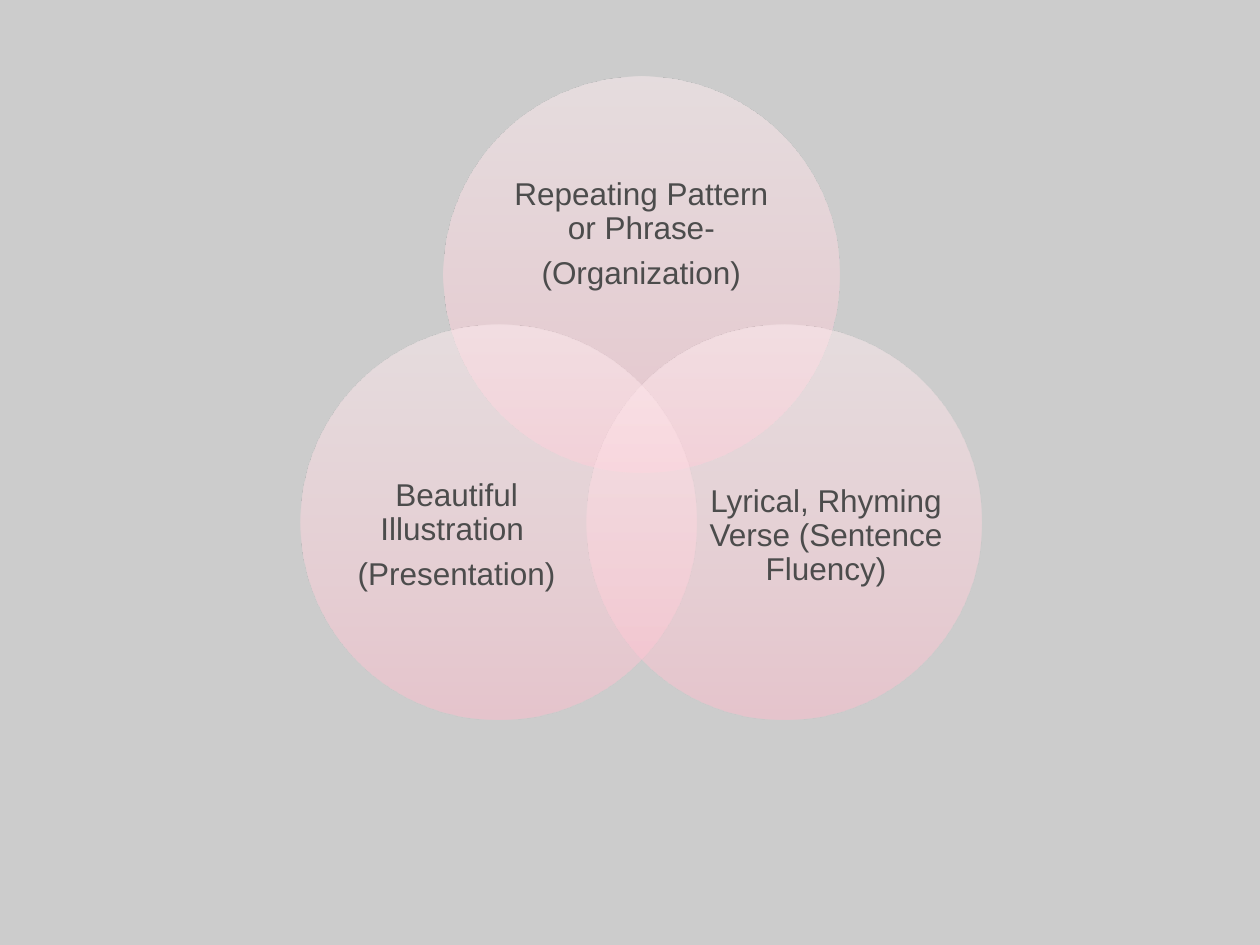
from dataclasses import dataclass
from math import cos, radians, sin

from pptx import Presentation
from pptx import util as u
from pptx.dml.color import RGBColor
from pptx.enum import shapes, text
from pptx.oxml import parse_xml
from pptx.oxml.ns import nsdecls, qn


@dataclass(frozen=True)
class Theme:
    background: str = "CCCCCC"
    ink: str = "4C4C4C"
    font: str = "Arial"
    size: float = 18
    # position %, colour; from the bottom of a circle to its top
    stops: tuple = ((0, "FFBDCD"), (35, "FFD1DB"), (100, "FFEEF1"))
    opacity: int = 50


THEME = Theme()
DIAMETER = 226
CENTRE = (366.5, 251.2)
ORBIT = DIAMETER * 5 / 12  # from the diagram centre to each circle centre

# Angle of the circle, offset and size of its label, paragraphs
CIRCLES = [
    (-90, (0, -22.7), (165.6, 101.5),
     ["Repeating Pattern or Phrase-", "(Organization)"]),
    (30, (24, 8), (135.6, 124.4),
     ["Lyrical, Rhyming Verse (Sentence Fluency)"]),
    (150, (-24, 8), (135.6, 124.4),
     ["Beautiful Illustration ", "(Presentation)"]),
]


def set_all(target, values):
    for name, value in values.items():
        setattr(target, name, value)


def centred(x, y, width, height):
    """Left, top, width and height of a frame around a centre point."""
    return [u.Pt(v) for v in (x - width / 2, y - height / 2, width, height)]


def fill_gradient(shape):
    shape.fill.gradient()
    shape.fill.gradient_angle = 90
    stops = shape._element.spPr.find(qn("a:gradFill")).find(qn("a:gsLst"))
    for old in list(stops):
        stops.remove(old)
    for position, colour in THEME.stops:
        stops.append(parse_xml(
            f'<a:gs {nsdecls("a")} pos="{position * 1000}">'
            f'<a:srgbClr val="{colour}">'
            f'<a:alpha val="{THEME.opacity * 1000}"/></a:srgbClr></a:gs>'))


def add_circle(group, x, y):
    circle = group.shapes.add_shape(
        shapes.MSO_SHAPE.OVAL, *centred(x, y, DIAMETER, DIAMETER))
    circle.shadow.inherit = False
    circle.line.fill.background()
    fill_gradient(circle)


def add_label(group, x, y, size, lines):
    box = group.shapes.add_textbox(*centred(x, y, *size))
    frame = box.text_frame
    set_all(frame, {
        "word_wrap": True, "vertical_anchor": text.MSO_ANCHOR.MIDDLE,
        "margin_left": 0, "margin_top": 0,
        "margin_right": 0, "margin_bottom": 0})
    for index, line in enumerate(lines):
        para = frame.add_paragraph() if index else frame.paragraphs[0]
        set_all(para, {
            "alignment": text.PP_ALIGN.CENTER, "line_spacing": 0.9,
            "space_after": u.Pt(THEME.size * 0.35)})
        span = para.add_run()
        span.text = line
        set_all(span.font, {"name": THEME.font, "size": u.Pt(THEME.size)})
        span.font.color.rgb = RGBColor.from_string(THEME.ink)


def main():
    deck = Presentation()
    set_all(deck, {"slide_width": u.Pt(720), "slide_height": u.Pt(540)})
    page = deck.slides.add_slide(deck.slide_layouts[6])

    # Background
    page.background.fill.solid()
    page.background.fill.fore_color.rgb = RGBColor.from_string(THEME.background)

    # Venn diagram
    venn = page.shapes.add_group_shape()
    for angle, (dx, dy), size, lines in CIRCLES:
        x = CENTRE[0] + ORBIT * cos(radians(angle))
        y = CENTRE[1] + ORBIT * sin(radians(angle))
        add_circle(venn, x, y)
        add_label(venn, x + dx, y + dy, size, lines)

    deck.save("out.pptx")


if __name__ == "__main__":
    main()
